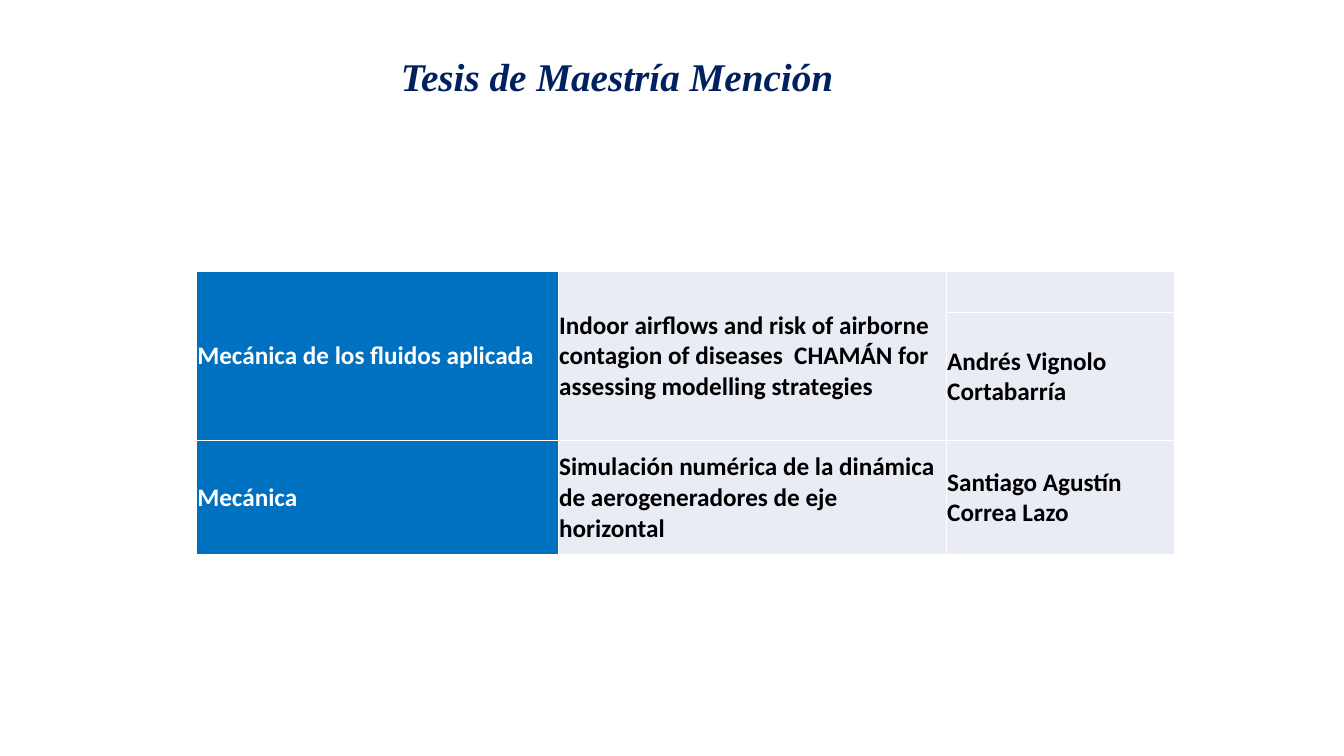
"""Build a slide that lists master's theses by field, title and author."""
from dataclasses import dataclass

import lxml.etree
import pptx
import pptx.dml.color
import pptx.enum.text
import pptx.oxml.ns
import pptx.slide
import pptx.table
import pptx.text.text
import pptx.util

Pt = pptx.util.Pt


@dataclass(frozen=True)
class Theme:
    navy: str = "002060"
    blue: str = "0070C0"
    pale: str = "E9EBF5"
    white: str = "FFFFFF"
    black: str = "000000"
    head_font: str = "Times New Roman"
    body_font: str = "Calibri"
    head_size: float = 28
    body_size: float = 18
    rule: float = 1
    inset: float = 0.72


@dataclass(frozen=True)
class Entry:
    row: int
    col: int
    text: str
    span: int = 1


THEME = Theme()
WIDTHS = (258.5, 277.2, 163.4)
HEIGHTS = (29.5, 91.4, 81.4)
ENTRIES = (
    Entry(0, 0, "Mecánica de los fluidos aplicada", 2),
    Entry(0, 1, "Indoor airflows and risk of airborne contagion of diseases  CHAMÁN "
                "for assessing modelling strategies", 2),
    Entry(1, 2, "Andrés Vignolo Cortabarría"),
    Entry(2, 0, "Mecánica"),
    Entry(2, 1, "Simulación numérica de la dinámica de aerogeneradores de eje horizontal"),
    Entry(2, 2, "Santiago Agustín Correa Lazo"),
)


def rgb(code: str) -> pptx.dml.color.RGBColor:
    return pptx.dml.color.RGBColor.from_string(code)


def style(frame: pptx.text.text.TextFrame, name: str, size: float, color: str,
          slant: bool = False) -> None:
    for para in frame.paragraphs:
        for run in para.runs:
            font = run.font
            font.name, font.size = name, Pt(size)
            font.bold, font.italic = True, slant
            font.color.rgb = rgb(color)


def add_title(slide: pptx.slide.Slide) -> None:
    title = slide.shapes.title
    title.left, title.top, title.width, title.height = Pt(43.2), Pt(34), Pt(795), Pt(70.6)
    frame = title.text_frame
    frame.text = "Tesis de Maestría Mención"
    frame.auto_size = pptx.enum.text.MSO_AUTO_SIZE.NONE
    frame.vertical_anchor = pptx.enum.text.MSO_ANCHOR.TOP
    frame.paragraphs[0].alignment = pptx.enum.text.PP_ALIGN.CENTER
    style(frame, THEME.head_font, THEME.head_size, THEME.navy, True)


def add_rules(cell: pptx.table._Cell) -> None:
    qn = pptx.oxml.ns.qn
    props = cell._tc.get_or_add_tcPr()
    for side in ("L", "R", "T", "B"):
        line = lxml.etree.SubElement(props, qn(f"a:ln{side}"), w=str(Pt(THEME.rule)))
        fill = lxml.etree.SubElement(line, qn("a:solidFill"))
        lxml.etree.SubElement(fill, qn("a:srgbClr"), val=THEME.white)


def format_cell(cell: pptx.table._Cell, col: int) -> None:
    add_rules(cell)
    cell.fill.solid()
    cell.fill.fore_color.rgb = rgb(THEME.pale if col else THEME.blue)
    cell.vertical_anchor = pptx.enum.text.MSO_ANCHOR.MIDDLE
    cell.margin_left = cell.margin_right = cell.margin_top = Pt(THEME.inset)
    cell.margin_bottom = Pt(0)


def add_theses(slide: pptx.slide.Slide) -> None:
    frame = slide.shapes.add_table(len(HEIGHTS), len(WIDTHS), Pt(140.2), Pt(193.7),
                                   Pt(sum(WIDTHS)), Pt(sum(HEIGHTS)))
    table = frame.table
    table.first_row = table.horz_banding = False
    for col, width in enumerate(WIDTHS):
        table.columns[col].width = Pt(width)
    for row, height in enumerate(HEIGHTS):
        table.rows[row].height = Pt(height)
        for col in range(len(WIDTHS)):
            format_cell(table.cell(row, col), col)
    for entry in ENTRIES:
        cell = table.cell(entry.row, entry.col)
        if entry.span > 1:
            cell.merge(table.cell(entry.row + entry.span - 1, entry.col))
        cell.text_frame.text = entry.text
        style(cell.text_frame, THEME.body_font, THEME.body_size,
              THEME.black if entry.col else THEME.white)


def main() -> None:
    deck = pptx.Presentation()
    deck.slide_width, deck.slide_height = Pt(960), Pt(540)
    slide = deck.slides.add_slide(deck.slide_layouts.get_by_name("Title Only"))
    add_title(slide)
    add_theses(slide)
    deck.save("out.pptx")


if __name__ == "__main__":
    main()
